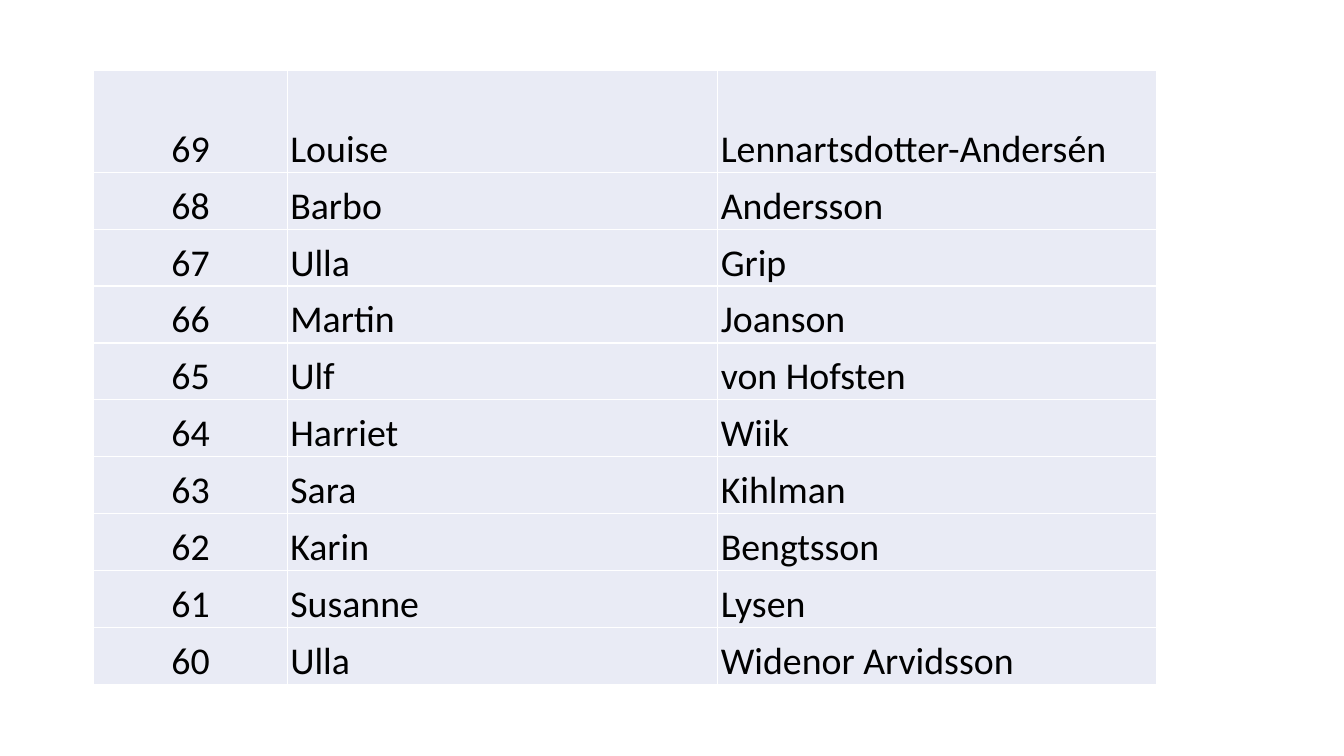
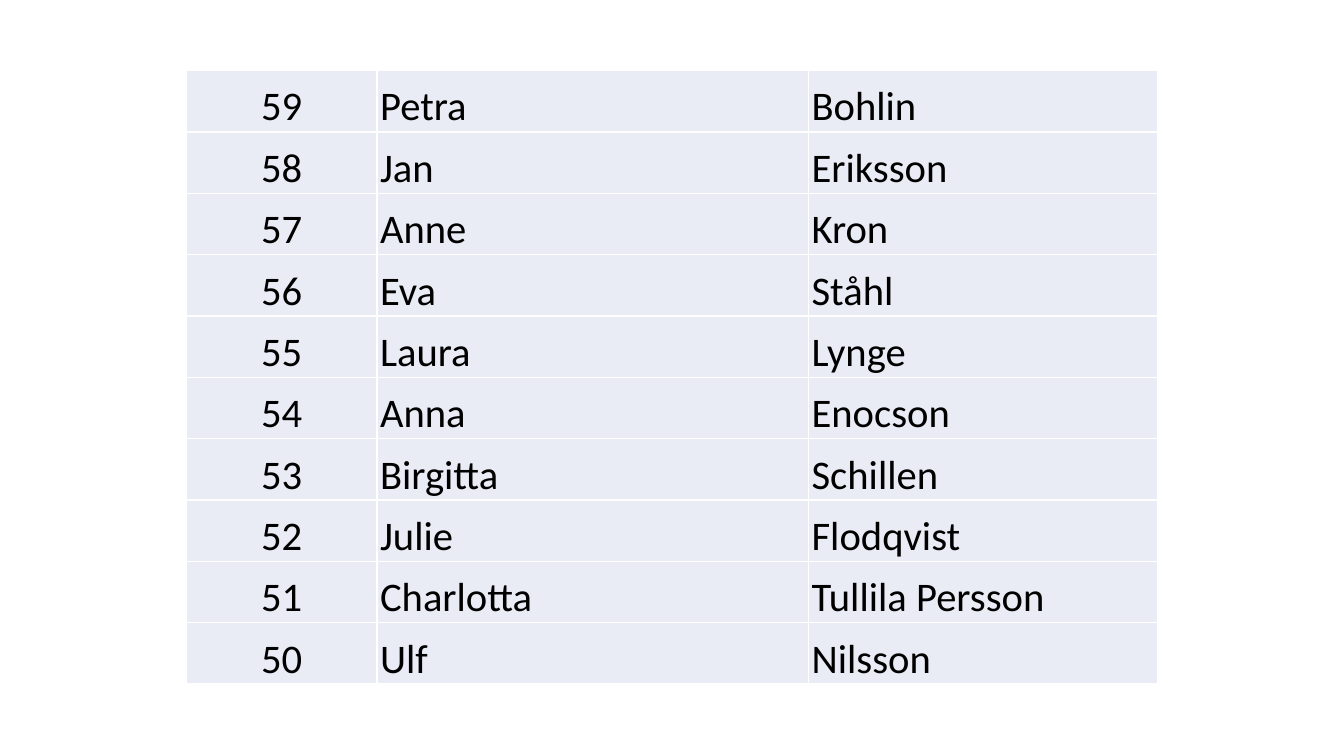
"""Build two slides that list numbered people in plain tables."""
from lxml.etree import SubElement
from pptx import Presentation
from pptx.dml.color import RGBColor
from pptx.enum.text import MSO_ANCHOR, PP_ALIGN
from pptx.oxml.ns import qn
from pptx.util import Inches, Pt

COLORS = {"cell": "E9EBF5", "border": "FFFFFF", "text": "000000"}
FONT = "Calibri"
SLIDE_SIZE = (13.33, 7.5)
TABLE_TOP, TABLE_HEIGHT = 0.7, 6.09
CELL_FORMAT = {
    "margin_left": Inches(0.03),
    "margin_top": Inches(0.03),
    "margin_right": Inches(0.03),
    "margin_bottom": 0,
    "vertical_anchor": MSO_ANCHOR.BOTTOM,
}
ALIGNMENTS = (PP_ALIGN.CENTER, PP_ALIGN.LEFT, PP_ALIGN.LEFT)

LISTS = [
    {
        "left": 0.93,
        "columns": (1.92, 4.27, 4.35),
        "first_row": 1.01,
        "size": 27,
        "start": 69,
        "people": [
            ("Louise", "Lennartsdotter-Andersén"),
            ("Barbo", "Andersson"),
            ("Ulla", "Grip"),
            ("Martin", "Joanson"),
            ("Ulf", "von Hofsten"),
            ("Harriet", "Wiik"),
            ("Sara", "Kihlman"),
            ("Karin", "Bengtsson"),
            ("Susanne", "Lysen"),
            ("Ulla", "Widenor Arvidsson"),
        ],
    },
    {
        "left": 1.85,
        "columns": (1.89, 4.28, 3.46),
        "first_row": TABLE_HEIGHT / 10,
        "size": 29,
        "start": 59,
        "people": [
            ("Petra", "Bohlin"),
            ("Jan", "Eriksson"),
            ("Anne", "Kron"),
            ("Eva", "Ståhl"),
            ("Laura", "Lynge"),
            ("Anna", "Enocson"),
            ("Birgitta", "Schillen"),
            ("Julie", "Flodqvist"),
            ("Charlotta", "Tullila Persson"),
            ("Ulf", "Nilsson"),
        ],
    },
]


def add_borders(cell):
    properties = cell._tc.get_or_add_tcPr()
    for side in ("a:lnL", "a:lnR", "a:lnT", "a:lnB"):
        line = SubElement(properties, qn(side), w=str(Pt(1)))
        fill = SubElement(line, qn("a:solidFill"))
        SubElement(fill, qn("a:srgbClr"), val=COLORS["border"])


def fill_cell(cell, text, alignment, size):
    for name, value in CELL_FORMAT.items():
        setattr(cell, name, value)
    add_borders(cell)
    cell.fill.solid()
    cell.fill.fore_color.rgb = RGBColor.from_string(COLORS["cell"])
    para = cell.text_frame.paragraphs[0]
    para.alignment = alignment
    span = para.add_run()
    span.text = text
    span.font.name = FONT
    span.font.size = Pt(size)
    span.font.color.rgb = RGBColor.from_string(COLORS["text"])


def add_list(page, content):
    people, columns = content["people"], content["columns"]
    frame = page.shapes.add_table(
        len(people), len(columns), Inches(content["left"]), Inches(TABLE_TOP),
        Inches(sum(columns)), Inches(TABLE_HEIGHT))
    table = frame.table
    table.first_row = table.horz_banding = False
    for column, width in zip(table.columns, columns):
        column.width = Inches(width)
    other_row = (TABLE_HEIGHT - content["first_row"]) / (len(people) - 1)
    for index, (row, names) in enumerate(zip(table.rows, people)):
        row.height = Inches(other_row if index else content["first_row"])
        texts = (str(content["start"] - index), *names)
        for cell, text, alignment in zip(row.cells, texts, ALIGNMENTS):
            fill_cell(cell, text, alignment, content["size"])


def main():
    deck = Presentation()
    deck.slide_width, deck.slide_height = map(Inches, SLIDE_SIZE)
    for content in LISTS:
        add_list(deck.slides.add_slide(deck.slide_layouts[6]), content)
    deck.save("out.pptx")


if __name__ == "__main__":
    main()
